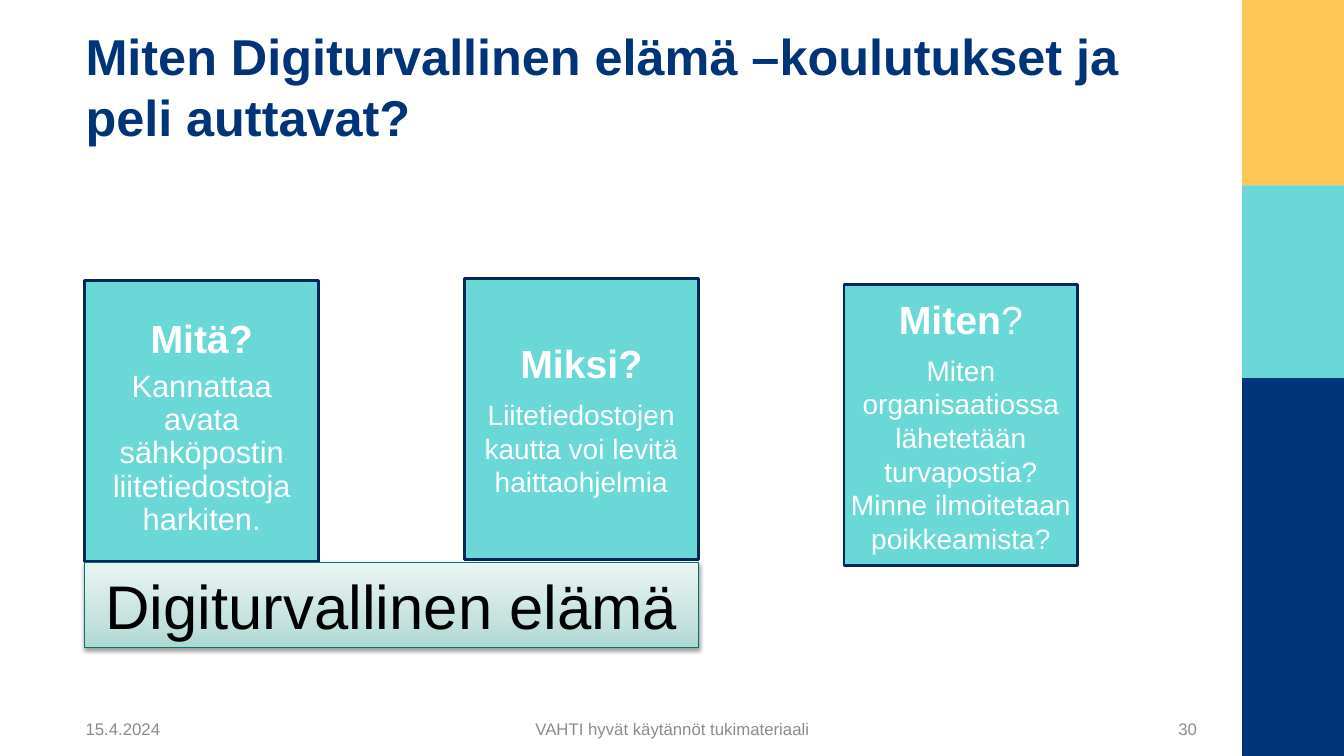
from copy import deepcopy
from lxml import etree
from pptx import Presentation, util as u
from pptx.dml.color import RGBColor
from pptx.enum import shapes, text
from pptx.oxml.ns import qn

C = {"navy": "003479", "yellow": "FFC658", "aqua": "69D8D7", "edge": "00265A",
     "teal": "00746E", "white": "FFFFFF", "black": "000000", "grey": "8C8C8C"}
AL = text.PP_ALIGN
MID = text.MSO_ANCHOR.MIDDLE

prs = Presentation()
prs.slide_width, prs.slide_height = u.Inches(13.33), u.Inches(7.5)
s = prs.slides.add_slide(prs.slide_layouts[6])


def box(x, y, w, h, fill=None, line=None, weight=2):
    """Rectangle, or a text box when there is no fill."""
    area = [u.Inches(v) for v in (x, y, w, h)]
    if not fill:
        sp = s.shapes.add_textbox(*area)
    else:
        sp = s.shapes.add_shape(shapes.MSO_SHAPE.RECTANGLE, *area)
        sp.shadow.inherit = False
        sp.fill.solid()
        sp.fill.fore_color.rgb = RGBColor.from_string(C[fill])
        if line:
            sp.line.color.rgb = RGBColor.from_string(C[line])
            sp.line.width = u.Pt(weight)
        else:
            sp.line.fill.background()
    sp.text_frame.word_wrap = True
    return sp


def write(p, words, size, color, align=AL.LEFT, bold=False):
    p.text = words
    p.alignment = align
    f = p.font
    f.name, f.size, f.bold = "Arial", u.Pt(size), bold
    f.color.rgb = RGBColor.from_string(C[color])


# Colour bands on the right edge
top = 0
for color, height in (("yellow", 1.84), ("aqua", 1.91), ("navy", 3.75)):
    box(12.32, top, 1.01, height, color)
    top += height

# Title
tf = box(0.75, 0.16, 11.22, 1.34).text_frame
tf.vertical_anchor = text.MSO_ANCHOR.BOTTOM
write(tf.paragraphs[0], "Miten Digiturvallinen elämä –koulutukset ja peli auttavat?",
      36, "navy", bold=True)

# Question cards: top, heading, body, body size, line spacing, gap, side and top insets
LEFT, PITCH = 0.84, 3.765
cards = [
    (2.78, "Mitä?", "Kannattaa avata sähköpostin liitetiedostoja harkiten.", 22, 0.9, 6, 0.1, 0.15),
    (2.76, "Miksi?", "Liitetiedostojen kautta voi levitä haittaohjelmia", 20, 1, 8, 0, 0),
    (2.82, "Miten", "Miten organisaatiossa lähetetään turvapostia? Minne ilmoitetaan poikkeamista?",
     20, 1, 8, 0, 0),
]
for i, (y, heading, body, size, spacing, gap, side, inset) in enumerate(cards):
    tf = box(LEFT + i * PITCH, y, 2.32, 2.79, "aqua", "edge").text_frame
    tf.vertical_anchor = MID
    tf.margin_left = tf.margin_right = u.Inches(side)
    tf.margin_top, tf.margin_bottom = u.Inches(inset), 0
    head, p = tf.paragraphs[0], tf.add_paragraph()
    write(head, heading, 28, "white", AL.CENTER, bold=True)
    write(p, body, size, "white", AL.CENTER)
    head.line_spacing = p.line_spacing = spacing
    p.space_before = u.Pt(gap)
    if heading == "Miten":
        r = head.add_run()
        r.text = "?"
        r.font.bold = False

# Gradient bar under the first two cards
bar = box(LEFT, 5.58, 6.09, 0.84, "aqua", "teal", 0.75)
bar.fill.gradient()
bar.fill.gradient_angle = 90
spPr = bar._element.spPr
stops = spPr.find(qn("a:gradFill")).find(qn("a:gsLst"))
stops.insert(1, deepcopy(stops[0]))
for stop, (pos, color) in zip(bar.fill.gradient_stops,
                              ((0, "AFD8D3"), (0.35, "C8E3DF"), (1, "EAF5F3"))):
    stop.position = pos
    stop.color.rgb = RGBColor.from_string(color)
shadow = etree.SubElement(spPr.find(qn("a:effectLst")), qn("a:outerShdw"),
                          blurRad=str(u.Pt(3.1)), dist=str(u.Pt(1.6)),
                          dir="5400000", rotWithShape="0")
tint = etree.SubElement(shadow, qn("a:srgbClr"), val=C["black"])
etree.SubElement(tint, qn("a:alpha"), val="38000")
bar.text_frame.vertical_anchor = MID
write(bar.text_frame.paragraphs[0], "Digiturvallinen elämä", 44, "black", AL.CENTER)

# Footer
for x, w, words, align in ((0.75, 1.65, "15.4.2024", AL.LEFT),
                           (3.49, 6.36, "VAHTI hyvät käytännöt tukimateriaali", AL.CENTER),
                           (11.06, 0.91, "30", AL.RIGHT)):
    tf = box(x, 7.11, w, 0.24).text_frame
    tf.vertical_anchor = MID
    tf.margin_top = tf.margin_bottom = 0
    write(tf.paragraphs[0], words, 12, "grey", align)

prs.save("out.pptx")
